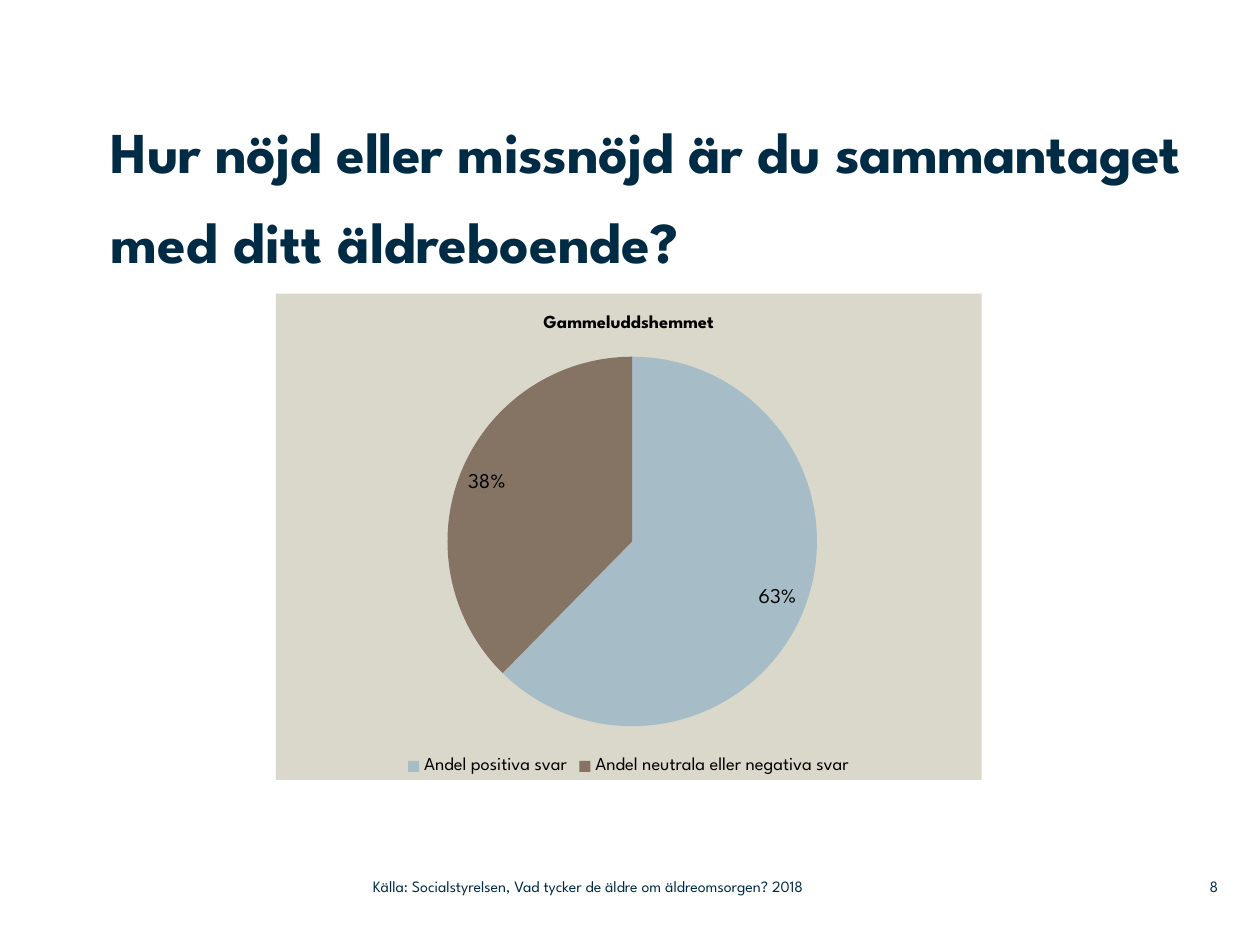
from pptx import Presentation
from pptx import util as u
from pptx.chart.data import CategoryChartData
from pptx.dml.color import RGBColor
from pptx.enum import chart as ch, text
from pptx.oxml import parse_xml
from pptx.oxml.ns import nsdecls

FONT = "League Spartan"
HUES = {"navy": "002B45", "black": "000000", "sand": "DAD7CB",
        "blue": "A6BCC6", "brown": "857363"}


def style(font, size, hue, bold=False):
    """Set the face, size, colour and weight of a font."""
    font.name, font.size, font.bold = FONT, u.Pt(size), bold
    font.color.rgb = RGBColor.from_string(HUES[hue])


def write(frame, runs, size=9, hue="navy", bold=False, lead=None,
          align=text.PP_ALIGN.LEFT, anchor=text.MSO_ANCHOR.MIDDLE):
    """Fill a frame with one paragraph of (words, spacing) runs."""
    frame.word_wrap = True
    frame.auto_size = text.MSO_AUTO_SIZE.NONE
    frame.vertical_anchor = anchor
    frame.margin_left = frame.margin_right = 0
    frame.margin_top = frame.margin_bottom = 0
    para = frame.paragraphs[0]
    para.alignment = align
    para.line_spacing = lead
    for words, gap in runs:
        run = para.add_run()
        run.text = words
        style(run.font, size, hue, bold)
        if gap:
            run.font._element.set("spc", str(gap))


class Deck:
    """Hold the presentation and its current slide."""

    def __init__(self):
        """Open a blank deck with one title slide."""
        self.prs = Presentation()
        self.prs.slide_width, self.prs.slide_height = u.Inches(10), u.Inches(7.5)
        self.slide = self.prs.slides.add_slide(self.prs.slide_layouts[5])

    def title(self, box, runs):
        """Place and fill the title."""
        head = self.slide.shapes.title
        head.left, head.top, head.width, head.height = map(u.Inches, box)
        write(head.text_frame, runs, size=33, bold=True, lead=1.3,
              anchor=text.MSO_ANCHOR.TOP)

    def note(self, box, words, **look):
        """Add a small line of text."""
        shape = self.slide.shapes.add_textbox(*map(u.Inches, box))
        write(shape.text_frame, [(words, 0)], **look)

    def pie(self, box, name, parts):
        """Add a pie of (label, value, hue) parts."""
        data = CategoryChartData()
        data.categories = [part[0] for part in parts]
        data.add_series(name, [part[1] for part in parts])
        chart = self.slide.shapes.add_chart(
            ch.XL_CHART_TYPE.PIE, *map(u.Inches, box), data).chart
        style(chart.font, 18, "black")

        chart.has_title = True
        frame = chart.chart_title.text_frame
        frame.text = name
        style(frame.paragraphs[0].runs[0].font, 10.5, "black", True)
        chart.chart_title.include_in_layout = False

        chart.has_legend = True
        chart.legend.position = ch.XL_LEGEND_POSITION.BOTTOM
        chart.legend.include_in_layout = False
        style(chart.legend.font, 10.5, "black")

        plot = chart.plots[0]
        plot.vary_by_categories = True
        for spot, part in enumerate(parts):
            fill = plot.series[0].points[spot].format.fill
            fill.solid()
            fill.fore_color.rgb = RGBColor.from_string(HUES[part[2]])
        plot.has_data_labels = True
        tags = plot.data_labels
        tags.show_value = True
        tags.number_format, tags.number_format_is_linked = '0"%"', False
        tags.position = ch.XL_LABEL_POSITION.INSIDE_END
        style(tags.font, 12, "black")
        self.frame(chart, x=0.24, y=0.13, w=0.53, h=0.76)

    def frame(self, chart, **area):
        """Fix the plot area and colour the chart's ground."""
        root = chart._chartSpace
        zone = root.chart.plotArea
        for old in zone.findall("{*}layout"):
            zone.remove(old)
        sizes = "".join(f'<c:{key} val="{val}"/>' for key, val in area.items())
        zone.insert(0, parse_xml(
            f'<c:layout {nsdecls("c")}><c:manualLayout>'
            '<c:layoutTarget val="inner"/><c:xMode val="edge"/>'
            f'<c:yMode val="edge"/>{sizes}</c:manualLayout></c:layout>'))
        root.chart.addnext(parse_xml(
            f'<c:spPr {nsdecls("c", "a")}><a:solidFill>'
            f'<a:srgbClr val="{HUES["sand"]}"/></a:solidFill>'
            '<a:ln><a:noFill/></a:ln></c:spPr>'))


def main():
    """Build and save the slide."""
    deck = Deck()
    deck.note((9.2, 6.89, 0.47, 0.29), "8", align=text.PP_ALIGN.RIGHT)
    deck.note((2.96, 6.89, 4.43, 0.29),
              "Källa: Socialstyrelsen, Vad tycker de äldre om äldreomsorgen? 2018")
    deck.title((0.88, 0.75, 8.83, 1.42),
               [("Hur nöjd eller missnöjd är du sammantaget ", -30),
                ("med ditt äldreboende?", 0)])
    deck.pie((2.19, 2.33, 5.6, 3.86), "Gammeluddshemmet",
             [("Andel positiva svar", 63, "blue"),
              ("Andel neutrala eller negativa svar", 38, "brown")])
    deck.prs.save("out.pptx")


if __name__ == "__main__":
    main()
